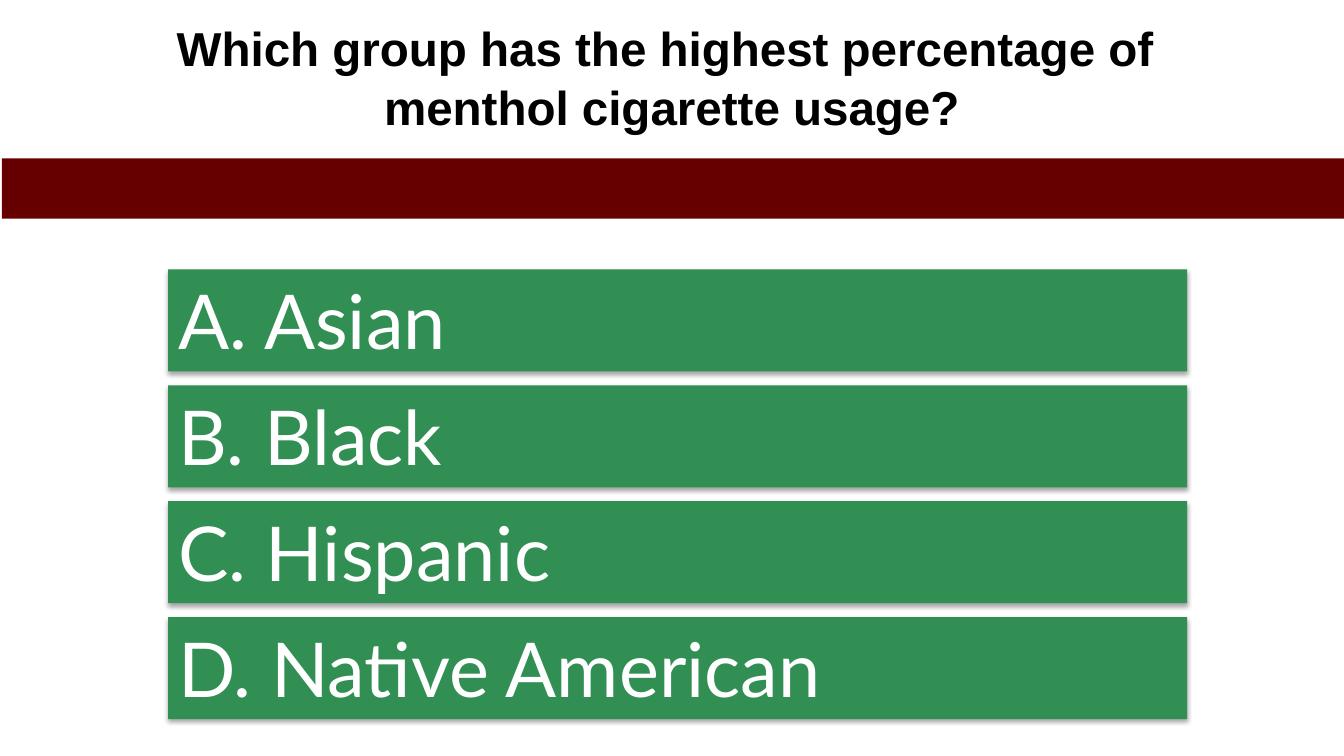
import pptx
import pptx.dml.color
import pptx.enum.shapes
import pptx.enum.text
import pptx.util
from dataclasses import dataclass
from lxml import etree

Cm = pptx.util.Cm
Pt = pptx.util.Pt
RGB = pptx.dml.color.RGBColor.from_string
ALIGN = pptx.enum.text.PP_ALIGN
ANCHOR = pptx.enum.text.MSO_ANCHOR
FIT = pptx.enum.text.MSO_AUTO_SIZE
RECT = pptx.enum.shapes.MSO_SHAPE.RECTANGLE
A = "http://schemas.openxmlformats.org/drawingml/2006/main"


@dataclass(frozen=True)
class Theme:
    ink: str = "000000"
    paper: str = "FFFFFF"
    bar: str = "660000"
    answer: str = "328F54"
    title_font: str = "Arial"
    answer_font: str = "Lato"
    title_size: int = 34
    answer_size: int = 54


THEME = Theme()
QUESTION = ["Which group has the highest percentage of ", "menthol cigarette usage?"]
ANSWERS = ["A. Asian", "B. Black", "C. Hispanic", "D. Native American"]


def apply(obj, values):
    for name, value in values.items():
        setattr(obj, name, value)


def write(tf, lines, align, color, frame, font):
    """Fill a text frame with one paragraph per line."""
    apply(tf, frame)
    for i, line in enumerate(lines):
        p = tf.add_paragraph() if i else tf.paragraphs[0]
        p.alignment = align
        if i:
            p.space_before = Pt(1.6)
        r = p.add_run()
        r.text = line
        apply(r.font, font)
        r.font.color.rgb = RGB(color)


def add_rect(s, left, top, width, height, color):
    sp = s.shapes.add_shape(RECT, Cm(left), Cm(top), Cm(width), Cm(height))
    sp.shadow.inherit = False
    sp.fill.solid()
    sp.fill.fore_color.rgb = RGB(color)
    sp.line.fill.background()
    return sp


def add_soft_shadow(sp):
    """Put a faint shadow straight below the shape."""
    effects = sp._element.spPr.find(f"{{{A}}}effectLst")
    shadow = etree.SubElement(effects, f"{{{A}}}outerShdw", blurRad="40000",
                              dist="23000", dir="5400000", rotWithShape="0")
    color = etree.SubElement(shadow, f"{{{A}}}srgbClr", val=THEME.ink)
    etree.SubElement(color, f"{{{A}}}alpha", val="35000")


def add_question(s, left, top, width, height):
    title = s.shapes.title
    apply(title, {"left": Cm(left), "top": Cm(top),
                  "width": Cm(width), "height": Cm(height)})
    write(title.text_frame, QUESTION, ALIGN.CENTER, THEME.ink,
          {"word_wrap": True, "auto_size": FIT.NONE,
           "vertical_anchor": ANCHOR.TOP, "margin_top": Cm(0.28)},
          {"name": THEME.title_font, "size": Pt(THEME.title_size), "bold": True})


def add_answers(s, left, top, width, height, gap=0.35):
    """Stack the answers in equal rows that fill the box."""
    row = (height - gap * (len(ANSWERS) - 1)) / len(ANSWERS)
    for i, answer in enumerate(ANSWERS):
        sp = add_rect(s, left, top + i * (row + gap), width, row, THEME.answer)
        add_soft_shadow(sp)
        write(sp.text_frame, [answer], ALIGN.LEFT, THEME.paper,
              {"word_wrap": True, "auto_size": FIT.SHAPE_TO_FIT_TEXT,
               "vertical_anchor": ANCHOR.TOP},
              {"name": THEME.answer_font, "size": Pt(THEME.answer_size)})


def build_question_slide(prs, width):
    s = prs.slides.add_slide(prs.slide_layouts[5])
    s.background.fill.solid()
    s.background.fill.fore_color.rgb = RGB(THEME.paper)
    add_question(s, 0, 0.2, width, 3.58)
    add_answers(s, 4.24, 6.79, 25.68, 11.33)
    add_rect(s, 0.05, 3.99, width - 0.05, 1.52, THEME.bar)


def main():
    prs = pptx.Presentation()
    width = 33.87
    apply(prs, {"slide_width": Cm(width), "slide_height": Cm(19.05)})
    build_question_slide(prs, width)
    prs.save("out.pptx")


if __name__ == "__main__":
    main()
